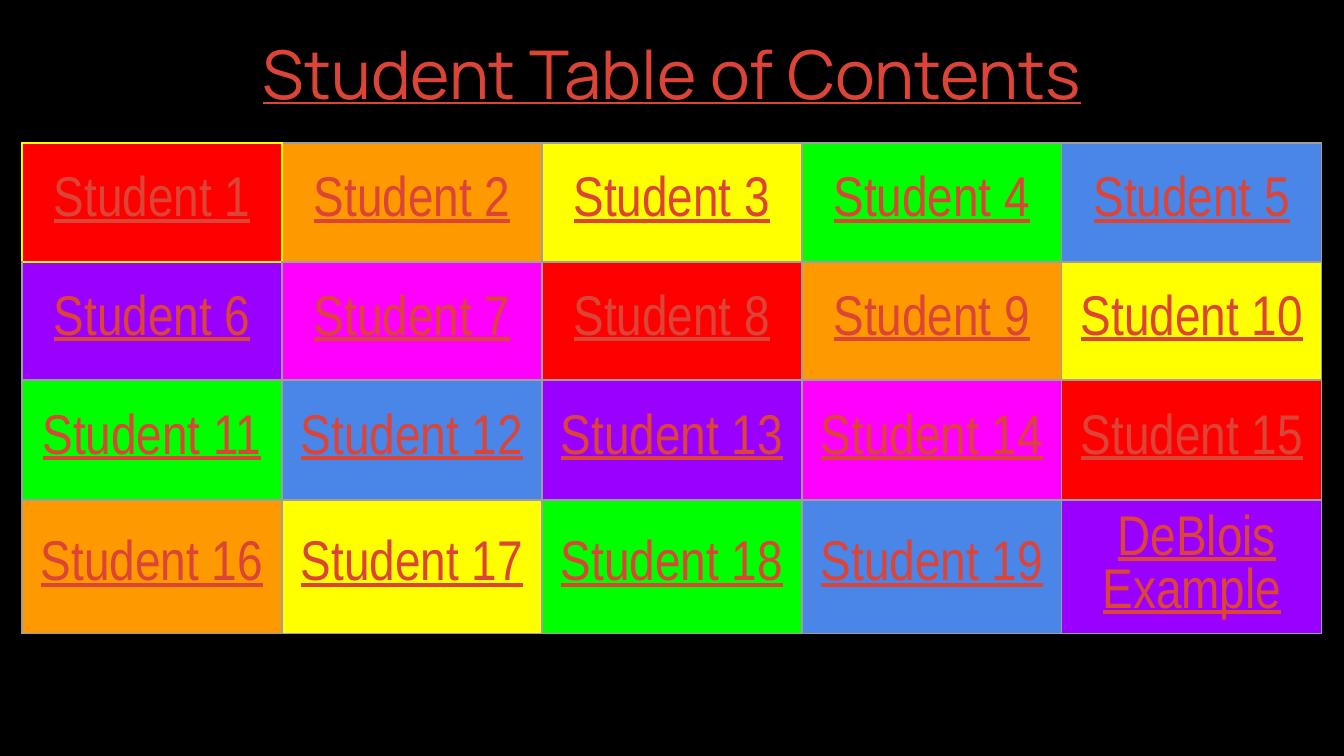
from itertools import cycle

from lxml import etree
from pptx import Presentation
from pptx.dml.color import RGBColor
from pptx.enum.text import MSO_ANCHOR, PP_ALIGN
from pptx.oxml.ns import qn
from pptx.util import Emu, Pt

CENTER = PP_ALIGN.CENTER
TOP = MSO_ANCHOR.TOP
MIDDLE = MSO_ANCHOR.MIDDLE

BLACK = RGBColor(0x00, 0x00, 0x00)
LINK = RGBColor(0xDB, 0x44, 0x37)
GREY = RGBColor(0x9E, 0x9E, 0x9E)
RED = RGBColor(0xFF, 0x00, 0x00)
ORANGE = RGBColor(0xFF, 0x99, 0x00)
YELLOW = RGBColor(0xFF, 0xFF, 0x00)
GREEN = RGBColor(0x00, 0xFF, 0x00)
BLUE = RGBColor(0x4A, 0x86, 0xE8)
PURPLE = RGBColor(0x99, 0x00, 0xFF)
MAGENTA = RGBColor(0xFF, 0x00, 0xFF)
RAINBOW = (RED, ORANGE, YELLOW, GREEN, BLUE, PURPLE, MAGENTA)

SLIDE_WIDTH, SLIDE_HEIGHT = 1344, 756
COLUMNS = 5
COLUMN_WIDTH = 260
ROW_HEIGHTS = (119, 118, 120, 112)
INSET = 13
TITLE_FONT = "Manrope"
STUDENT_FONT = "Arial Narrow"


def px(length):
    return Emu(round(length * 914400 / 134.4))


class ContentsSlide:
    def __init__(self, deck):
        self.slide = deck.slides.add_slide(deck.slide_layouts[6])
        self.slide.background.fill.solid()
        self.slide.background.fill.fore_color.rgb = BLACK

    def style_link(self, run, font, size):
        run.font.name = font
        run.font.size = Pt(size)
        run.font.color.rgb = LINK
        run.font.underline = True

    def set_insets(self, holder):
        holder.margin_left = holder.margin_right = px(INSET)
        holder.margin_top = holder.margin_bottom = px(INSET)

    def title(self, text, left, top, width, height):
        box = self.slide.shapes.add_textbox(px(left), px(top), px(width), px(height))
        frame = box.text_frame
        frame.word_wrap = True
        frame.vertical_anchor = TOP
        self.set_insets(frame)
        frame.text = text
        frame.paragraphs[0].alignment = CENTER
        self.style_link(frame.paragraphs[0].runs[0], TITLE_FONT, 36)

    def cell_borders(self, cell, colors):
        properties = cell._tc.get_or_add_tcPr()
        for index, (side, color) in enumerate(zip("LRTB", colors)):
            line = etree.Element(qn(f"a:ln{side}"), w=str(Pt(0.75)))
            fill = etree.SubElement(line, qn("a:solidFill"))
            etree.SubElement(fill, qn("a:srgbClr"), val=str(color))
            properties.insert(index, line)

    def cell(self, cell, label, fill, borders):
        self.set_insets(cell)
        cell.vertical_anchor = MIDDLE
        cell.fill.solid()
        cell.fill.fore_color.rgb = fill
        self.cell_borders(cell, borders)
        paragraph = cell.text_frame.paragraphs[0]
        paragraph.alignment = CENTER
        name = label.lstrip()
        if name != label:
            indent = paragraph.add_run()
            indent.text = " "
            indent.font.size = Pt(24)
            indent.font.color.rgb = BLACK
        link = paragraph.add_run()
        link.text = name
        self.style_link(link, STUDENT_FONT, 30)

    def contents_table(self, labels, left, top):
        table = self.slide.shapes.add_table(
            len(ROW_HEIGHTS), COLUMNS, px(left), px(top),
            px(COLUMNS * COLUMN_WIDTH), px(sum(ROW_HEIGHTS)),
        ).table
        table.first_row = table.horz_banding = False
        for column in table.columns:
            column.width = px(COLUMN_WIDTH)
        for row, height in zip(table.rows, ROW_HEIGHTS):
            row.height = px(height)
        for index, (label, fill) in enumerate(zip(labels, cycle(RAINBOW))):
            row, column = divmod(index, COLUMNS)
            first = index == 0
            borders = (
                YELLOW if first or index == 1 else GREY,
                YELLOW if first else GREY,
                YELLOW if first or index == COLUMNS else GREY,
                YELLOW if first else GREY,
            )
            self.cell(table.cell(row, column), label, fill, borders)


def main():
    deck = Presentation()
    deck.slide_width = px(SLIDE_WIDTH)
    deck.slide_height = px(SLIDE_HEIGHT)
    contents = ContentsSlide(deck)
    students = [f"Student {number}" for number in range(1, 20)]
    contents.contents_table(students + [" DeBlois Example"], 22, 143)
    contents.title("Student Table of Contents", 227, 19, 890, 106)
    deck.save("out.pptx")


if __name__ == "__main__":
    main()
